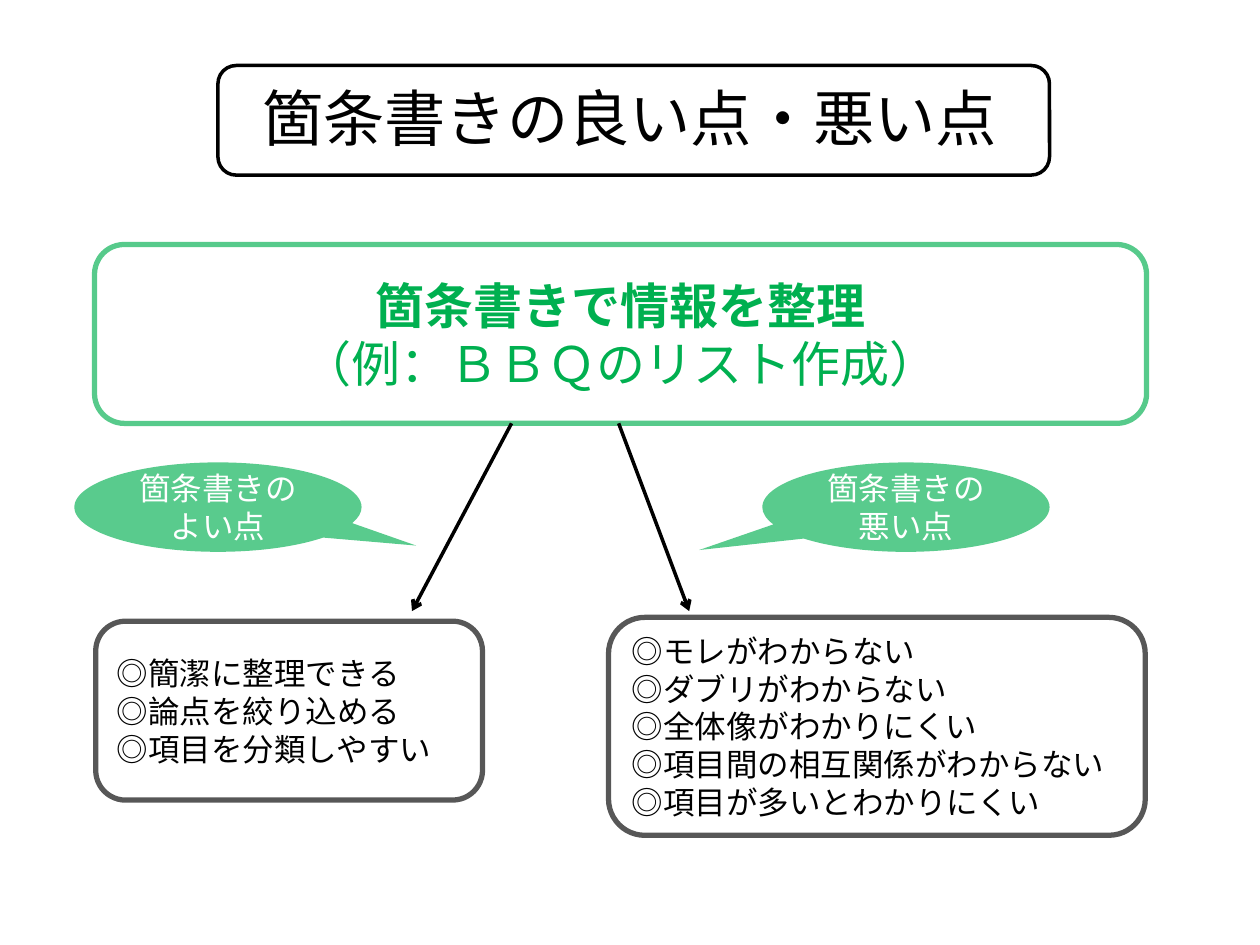
from collections import namedtuple

from lxml.etree import SubElement
from pptx import Presentation
from pptx.dml.color import RGBColor
from pptx.enum.shapes import MSO_CONNECTOR, MSO_SHAPE
from pptx.enum.text import MSO_ANCHOR, PP_ALIGN
from pptx.oxml.ns import qn
from pptx.util import Inches, Pt

BLACK = RGBColor(0x00, 0x00, 0x00)
WHITE = RGBColor(0xFF, 0xFF, 0xFF)
GREEN = RGBColor(0x00, 0xB0, 0x50)
FONT = "Noto Sans CJK JP"

# The slide is a grid of 100 columns by 75 rows
COLUMNS, ROWS = 100, 75
CELL = Inches(0.1)

Box = namedtuple("Box", "column row width height")


def inside(region, part):
    """Turn a box measured from the region's corner into a slide box."""
    return Box(region.column + part.column, region.row + part.row, part.width, part.height)


def cells(*values):
    return [round(value * CELL) for value in values]


def set_opacity(properties, percent):
    """Make the solid fill held by a shape's or line's properties see-through."""
    color = properties.find(qn("a:solidFill")).find(qn("a:srgbClr"))
    SubElement(color, qn("a:alpha")).set("val", str(percent * 1000))


def write_text(shape, lines, size=18, color=BLACK, align=PP_ALIGN.LEFT, bold_lines=()):
    frame = shape.text_frame
    frame.word_wrap = True
    frame.vertical_anchor = MSO_ANCHOR.MIDDLE
    for index, line in enumerate(lines):
        paragraph = frame.paragraphs[0] if index == 0 else frame.add_paragraph()
        paragraph.alignment = align
        run = paragraph.add_run()
        run.text = line
        font = run.font
        font.name, font.size, font.bold = FONT, Pt(size), index in bold_lines
        font.color.rgb = color
        SubElement(font._element, qn("a:ea")).set("typeface", FONT)


def add_frame(slide, box, color=BLACK, weight=3, opacity=66):
    shape = slide.shapes.add_shape(MSO_SHAPE.ROUNDED_RECTANGLE, *cells(*box))
    shape.shadow.inherit = False
    shape.fill.background()
    shape.line.width = Pt(weight)
    shape.line.color.rgb = color
    if opacity < 100:
        set_opacity(shape._element.spPr.find(qn("a:ln")), opacity)
    return shape


def add_callout(slide, box, text, tip):
    shape = slide.shapes.add_shape(MSO_SHAPE.OVAL_CALLOUT, *cells(*box))
    shape.shadow.inherit = False
    shape.adjustments[0], shape.adjustments[1] = tip
    shape.fill.solid()
    shape.fill.fore_color.rgb = GREEN
    set_opacity(shape._element.spPr, 65)
    shape.line.fill.background()
    write_text(shape, [text], color=WHITE, align=PP_ALIGN.CENTER)


def add_arrow(slide, box):
    """Draw an arrow from the box's corner; a negative width points left."""
    connector = slide.shapes.add_connector(
        MSO_CONNECTOR.STRAIGHT,
        *cells(box.column, box.row, box.column + box.width, box.row + box.height))
    connector.line.width = Pt(2)
    connector.line.color.rgb = BLACK
    properties = connector._element.spPr
    SubElement(properties.find(qn("a:ln")), qn("a:tailEnd")).set("type", "arrow")
    SubElement(properties, qn("a:effectLst"))


def build_title(slide, box, text):
    # Text area spans the slide margins, wider and taller than its frame
    title = slide.shapes.add_textbox(*cells(*box))
    write_text(title, [text], size=35, align=PP_ALIGN.CENTER)
    add_frame(slide, inside(box, Box(12.3, 2.2, 66, 8.7)), weight=2, opacity=100)


def build_topic(slide, box, lines):
    topic = add_frame(slide, box, color=GREEN)
    write_text(topic, lines, size=28, color=GREEN, align=PP_ALIGN.CENTER, bold_lines=(0,))


def build_branch(slide, box, arrow, callout_column, label, tip, list_box, points):
    add_arrow(slide, inside(box, arrow))
    add_callout(slide, inside(box, Box(callout_column, 3.1, 22.8, 7.1)), label, tip)
    points_frame = add_frame(slide, inside(box, list_box))
    write_text(points_frame, [f"◎{point}" for point in points])


def main():
    presentation = Presentation()
    presentation.slide_width, presentation.slide_height = COLUMNS * CELL, ROWS * CELL
    slide = presentation.slides.add_slide(presentation.slide_layouts[6])

    build_title(slide, Box(5, 3, 90, 12.5), "箇条書きの良い点・悪い点")
    build_topic(slide, Box(7.5, 19.4, 83.5, 14.2),
                ["箇条書きで情報を整理", "（例：ＢＢＱのリスト作成）"])

    # Good points on the left
    build_branch(slide, Box(5.9, 33.6, 34.7, 29.9),
                 arrow=Box(34.7, 0, -7.9, 14.9),
                 callout_column=0, label="箇条書きのよい点", tip=(0.69, 0.43),
                 list_box=Box(1.7, 15.7, 30.7, 14.2),
                 points=["簡潔に整理できる", "論点を絞り込める", "項目を分類しやすい"])

    # Bad points on the right
    build_branch(slide, Box(48.3, 33.6, 42.6, 32.7),
                 arrow=Box(0.8, 0, 5.6, 14.9),
                 callout_column=12.2, label="箇条書きの悪い点", tip=(-0.72, 0.48),
                 list_box=Box(0, 15.4, 42.6, 17.3),
                 points=["モレがわからない", "ダブリがわからない", "全体像がわかりにくい",
                         "項目間の相互関係がわからない", "項目が多いとわかりにくい"])

    presentation.save("out.pptx")


if __name__ == "__main__":
    main()
